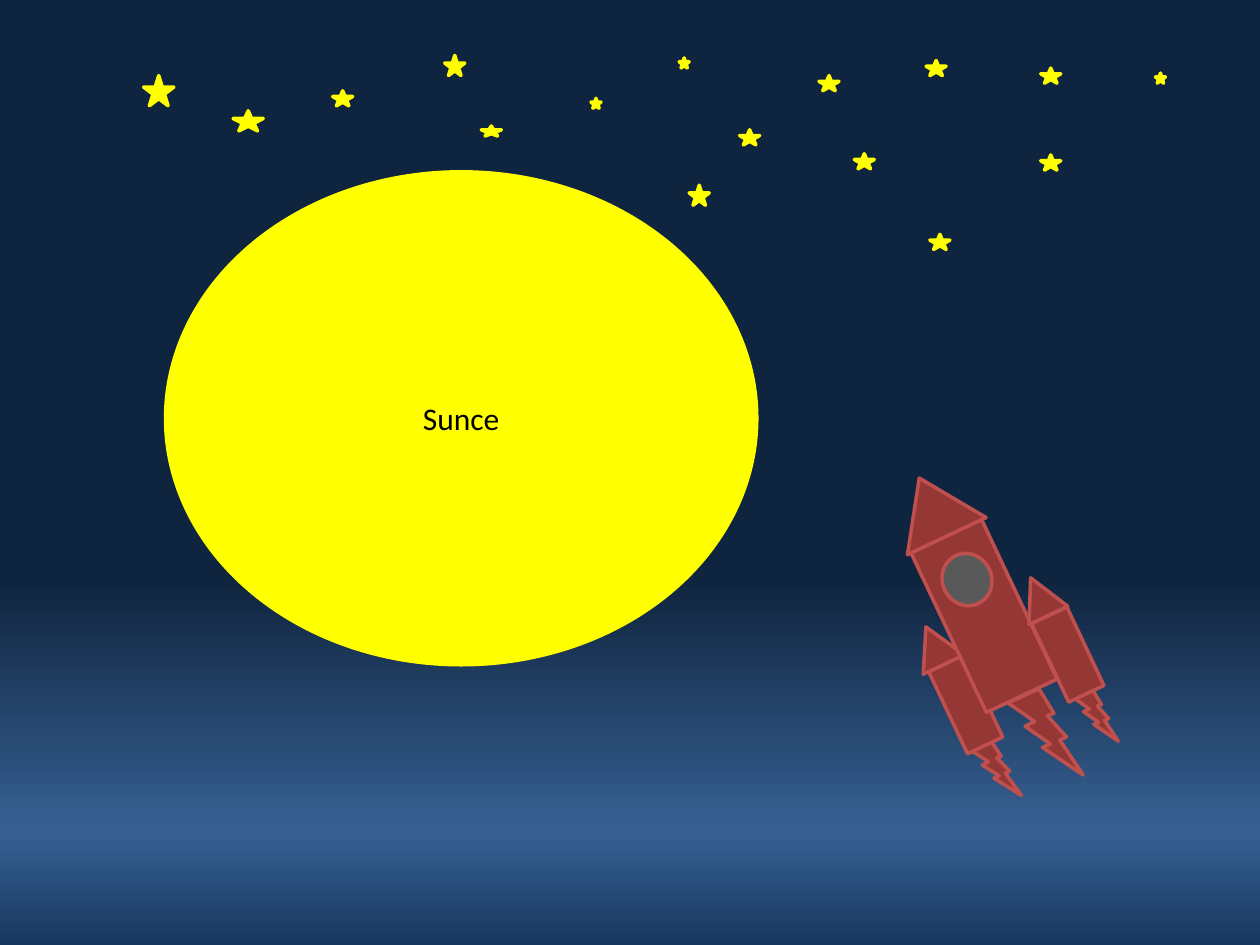
import copy

import pptx
import pptx.dml.color
import pptx.enum.shapes
import pptx.enum.text
import pptx.oxml.ns
import pptx.util

SHAPE = pptx.enum.shapes.MSO_SHAPE
Inches = pptx.util.Inches

COLORS = {
    "night": "0F243E",
    "horizon": "376092",
    "ground": "17375E",
    "yellow": "FFFF00",
    "hull": "953735",
    "edge": "C0504D",
    "window": "595959",
    "text": "000000",
}
SKY_STOPS = [(0, "night"), (34, "night"), (61, "night"), (88, "horizon"), (100, "ground")]
LABEL_FORMAT = {"name": "Calibri", "size": pptx.util.Pt(18)}
TILT = 334.7

# Back to front: preset, left, top, width, height, rotation, fill
ROCKET = [
    (SHAPE.LIGHTNING_BOLT, 7.7, 5.88, 0.41, 0.43, 0.9, "hull"),
    (SHAPE.RECTANGLE, 7.51, 5.23, 0.31, 0.72, TILT, "hull"),
    (SHAPE.ISOSCELES_TRIANGLE, 7.24, 4.96, 0.36, 0.33, TILT, "hull"),
    (SHAPE.ISOSCELES_TRIANGLE, 7.06, 3.77, 0.69, 0.51, TILT, "hull"),
    (SHAPE.LIGHTNING_BOLT, 8.51, 5.48, 0.38, 0.39, 4.1, "hull"),
    (SHAPE.LIGHTNING_BOLT, 7.99, 5.47, 0.62, 0.67, 2.2, "hull"),
    (SHAPE.RECTANGLE, 7.5, 4.19, 0.62, 1.4, TILT, "hull"),
    (SHAPE.RECTANGLE, 8.32, 4.85, 0.31, 0.69, TILT, "hull"),
    (SHAPE.ISOSCELES_TRIANGLE, 8.08, 4.57, 0.34, 0.33, TILT, "hull"),
    (SHAPE.OVAL, 7.48, 4.39, 0.39, 0.42, TILT, "window"),
]

# Star size (width, height) -> left and top of each star
STARS = {
    (0.24, 0.24): [(1.14, 0.6)],
    (0.24, 0.16): [(1.85, 0.88)],
    (0.16, 0.16): [(3.53, 0.44), (5.47, 1.47)],
    (0.16, 0.12): [
        (2.64, 0.72), (6.5, 0.6), (7.35, 0.48), (8.26, 1.23), (7.38, 1.86),
        (8.26, 0.54), (5.87, 1.03), (6.78, 1.22),
    ],
    (0.16, 0.08): [(3.82, 1)],
    (0.08, 0.08): [(5.39, 0.46), (4.69, 0.78), (9.17, 0.58)],
}


class SpaceScene:
    """Holds the colours and the slide being drawn."""

    def __init__(self, slide, colors):
        self.slide = slide
        self.colors = colors

    def rgb(self, color):
        return pptx.dml.color.RGBColor.from_string(self.colors[color])

    def sky(self, stops):
        """Fill the background from top to bottom with (percent, colour) stops."""
        fill = self.slide.background.fill
        fill.gradient()
        fill.gradient_angle = 270
        stop_list = self.slide.element.find(".//" + pptx.oxml.ns.qn("a:gsLst"))
        for _ in range(len(stops) - len(stop_list)):
            stop_list.append(copy.deepcopy(stop_list[0]))
        for stop, (percent, color) in zip(fill.gradient_stops, stops):
            stop.position = percent / 100
            stop.color.rgb = self.rgb(color)

    def group(self):
        return self.slide.shapes.add_group_shape()

    def shape(self, parent, preset, left, top, width, height, rotation, fill, line=None):
        shape = parent.shapes.add_shape(
            preset, Inches(left), Inches(top), Inches(width), Inches(height))
        shape.rotation = rotation
        shape.shadow.inherit = False
        shape.fill.solid()
        shape.fill.fore_color.rgb = self.rgb(fill)
        if line:
            shape.line.color.rgb = self.rgb(line)
            shape.line.width = pptx.util.Pt(2)
        else:
            shape.line.fill.background()
        return shape

    def label(self, shape, text):
        shape.text_frame.vertical_anchor = pptx.enum.text.MSO_ANCHOR.MIDDLE
        paragraph = shape.text_frame.paragraphs[0]
        paragraph.alignment = pptx.enum.text.PP_ALIGN.CENTER
        run = paragraph.add_run()
        run.text = text
        for attribute, value in LABEL_FORMAT.items():
            setattr(run.font, attribute, value)
        run.font.color.rgb = self.rgb("text")


def main():
    deck = pptx.Presentation()
    deck.slide_width, deck.slide_height = Inches(10), Inches(7.5)
    slide = deck.slides.add_slide(deck.slide_layouts[6])
    scene = SpaceScene(slide, COLORS)
    scene.sky(SKY_STOPS)

    sun = scene.shape(slide, SHAPE.OVAL, 1.3, 1.35, 4.72, 3.94, 0, "yellow")
    scene.label(sun, "Sunce")

    rocket = scene.group()
    for part in ROCKET:
        scene.shape(rocket, *part, line="edge")

    stars = scene.group()
    for size, positions in STARS.items():
        for position in positions:
            scene.shape(stars, SHAPE.STAR_5_POINT, *position, *size, 0, "yellow", "yellow")

    deck.save("out.pptx")


if __name__ == "__main__":
    main()
